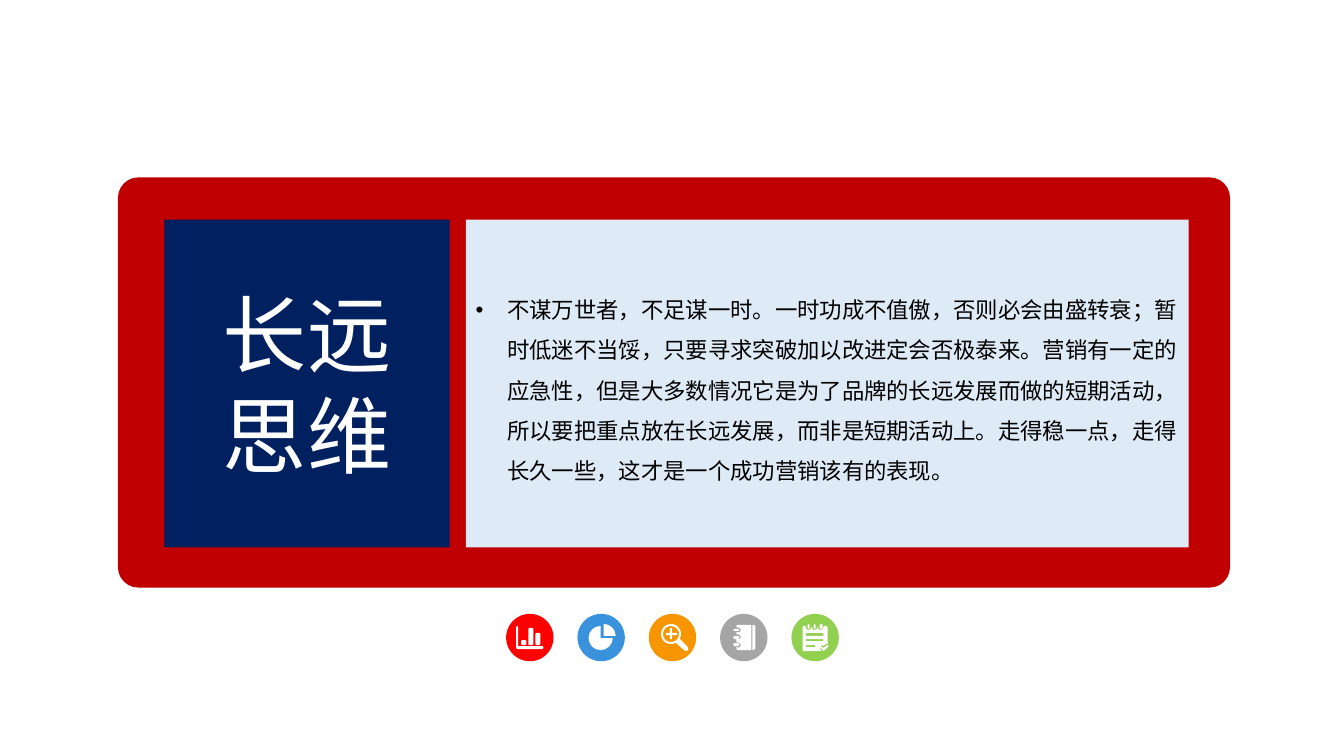
import math

import pptx
import pptx.util
import pptx.dml.color
import pptx.enum.shapes
import pptx.enum.text
import pptx.oxml.ns
import lxml.etree

Inches = pptx.util.Inches
Kind = pptx.enum.shapes.MSO_SHAPE
Align = pptx.enum.text.PP_ALIGN


def bar(left, top, width, height):
    """Outline of a bar with its corners cut by one unit."""
    right, bottom = left + width, top + height
    return [(left + 1, top), (right - 1, top), (right, top + 1),
            (right, bottom - 1), (right - 1, bottom), (left + 1, bottom),
            (left, bottom - 1), (left, top + 1)]


def arc(x, y, radius, start, end, steps):
    """Points along an arc, clockwise, angles in degrees."""
    angles = [math.radians(start + (end - start) * step / steps)
              for step in range(steps + 1)]
    return [(x + radius * math.cos(angle), y + radius * math.sin(angle))
            for angle in angles]


# Content
TITLE = ["长远", "思维"]
BODY = [
    "不谋万世者，不足谋一时。一时功成不值傲，否则必会由盛转衰；"
    "暂时低迷不当馁，只要寻求突破加以改进定会否极泰来。"
    "营销有一定的应急性，但是大多数情况它是为了品牌的长远发展而做的短期活动，"
    "所以要把重点放在长远发展，而非是短期活动上。"
    "走得稳一点，走得长久一些，这才是一个成功营销该有的表现。"
]
COLORS = {
    "frame": "C00000", "title": "002060", "body": "DEEBF7",
    "white": "FFFFFF", "black": "000000",
    "bars": "FF0000", "pie": "3992DB", "zoom": "F79600",
    "notebook": "A5A5A5", "checklist": "92D050",
}

# Icons from back to front: name, column, outlines in 1/100 inch from
# the disc's corner; an outline inside another one is a hole
ICONS = [
    ("checklist", 4, [
        [(32, 32), (31, 31), (28, 34), (30, 37), (12, 37), (11, 36), (11, 13), (12, 12)]
        + [point for x in (17, 23, 29) for point in
           [(x - 3, 12), *arc(x, 13, 3, 180, 0, 4), (x + 3, 12)]]
        + [(34, 12), (36, 13), (36, 30), (34, 30)],
        [(36, 33), (33, 36), (32, 37), (31, 36), (29, 34), (29, 33),
         (31, 33), (32, 34), (35, 31), (36, 31), (37, 32)],
        bar(14, 19, 18, 3), bar(14, 25, 18, 2), bar(14, 31, 10, 2),
        bar(16, 10, 2, 5), bar(22, 10, 2, 5), bar(28, 10, 3, 5),
    ]),
    ("zoom", 2, [
        arc(22, 20, 10, 61, 389, 16)
        + [(38, 32), (39, 34), (39, 36), (37, 37), (35, 36)],
        arc(22, 20, 8, 0, 345, 15),
        [(21, 14), (23, 14), (23, 19), (28, 19), (28, 21), (23, 21),
         (23, 25), (21, 25), (21, 21), (17, 21), (17, 19), (21, 19)],
    ]),
    ("notebook", 3, [
        [(16, 12), (17, 11), (31, 11), (31, 36), (17, 36), (16, 34)]
        + [point for y in (31, 23, 16) for point in
           [(16, y + 2), *arc(18, y, 2.5, 90, -90, 4), (16, y - 3)]],
        [(32, 11), (33, 11), (35, 12), (35, 34), (33, 36), (32, 36)],
        bar(13, 15, 6, 2), bar(13, 22, 6, 3), bar(13, 29, 6, 3),
    ]),
    ("bars", 0, [
        [(11, 35), (10, 34), (10, 13), (11, 12), (12, 13), (12, 32),
         (36, 32), (37, 33), (37, 34), (36, 35)],
        bar(15, 26, 5, 5), bar(22, 14, 5, 17), bar(29, 19, 5, 12),
    ]),
    ("pie", 1, [
        [(23, 24)] + arc(23, 24, 12, 0, 270, 12),
        [(26, 22)] + arc(26, 22, 12, 270, 360, 4),
    ]),
]

# Layout in inches
PANEL_TOP, PANEL_HEIGHT = 2.18, 3.25
DISC_LEFT, DISC_TOP, DISC_SIZE = 5.02, 6.09, 0.47
DISC_STEP = (7.85 - DISC_LEFT) / 4


def paint(shape, color):
    shape.shadow.inherit = False
    shape.fill.solid()
    shape.fill.fore_color.rgb = pptx.dml.color.RGBColor.from_string(COLORS[color])
    shape.line.fill.background()


def add_block(page, kind, color, place):
    block = page.shapes.add_shape(kind, *[Inches(length) for length in place])
    paint(block, color)
    return block


def add_symbol(page, outlines, left, top):
    placed = [[(Inches(left + x / 100), Inches(top + y / 100)) for x, y in outline]
              for outline in outlines]
    builder = page.shapes.build_freeform(*placed[0][0])
    for index, points in enumerate(placed):
        if index:
            builder.move_to(*points[0])
        builder.add_line_segments(points[1:], close=True)
    paint(builder.convert_to_shape(), "white")


def write(block, lines, size, typeface, color, align):
    frame = block.text_frame
    frame.word_wrap = True
    frame.vertical_anchor = pptx.enum.text.MSO_ANCHOR.MIDDLE
    for index, line in enumerate(lines):
        para = frame.paragraphs[0] if index == 0 else frame.add_paragraph()
        para.alignment = align
        span = para.add_run()
        span.text = line
        span.font.size = pptx.util.Pt(size)
        span.font.name = typeface
        span.font.color.rgb = pptx.dml.color.RGBColor.from_string(COLORS[color])
        # East Asian text takes its typeface from a:ea
        east = lxml.etree.SubElement(span.font._element, pptx.oxml.ns.qn("a:ea"))
        east.set("typeface", typeface)
    return frame


def add_bullet(para, indent):
    para.line_spacing = 1.5
    settings = para._p.get_or_add_pPr()
    settings.set("marL", str(indent))
    settings.set("indent", str(-indent))
    font = lxml.etree.SubElement(settings, pptx.oxml.ns.qn("a:buFont"))
    font.set("typeface", "Arial")
    bullet = lxml.etree.SubElement(settings, pptx.oxml.ns.qn("a:buChar"))
    bullet.set("char", "•")


def main():
    deck = pptx.Presentation()
    deck.slide_width, deck.slide_height = Inches(13.33), Inches(7.5)
    page = deck.slides.add_slide(deck.slide_layouts[6])

    # Frame and its two panels
    frame = add_block(page, Kind.ROUNDED_RECTANGLE, "frame", (1.17, 1.76, 11.03, 4.07))
    frame.adjustments[0] = 0.05
    title = add_block(page, Kind.RECTANGLE, "title", (1.63, PANEL_TOP, 2.83, PANEL_HEIGHT))
    write(title, TITLE, 60, "Noto Sans CJK JP", "white", Align.CENTER)
    body = add_block(page, Kind.RECTANGLE, "body", (4.62, PANEL_TOP, 7.17, PANEL_HEIGHT))
    text = write(body, BODY, 16, "Noto Sans CJK SC", "black", Align.LEFT)
    add_bullet(text.paragraphs[0], pptx.util.Pt(22.5))

    # Row of icon discs
    for name, column, outlines in ICONS:
        left = DISC_LEFT + column * DISC_STEP
        add_block(page, Kind.OVAL, name, (left, DISC_TOP, DISC_SIZE, DISC_SIZE))
        add_symbol(page, outlines, left, DISC_TOP)

    deck.save("out.pptx")


if __name__ == "__main__":
    main()
